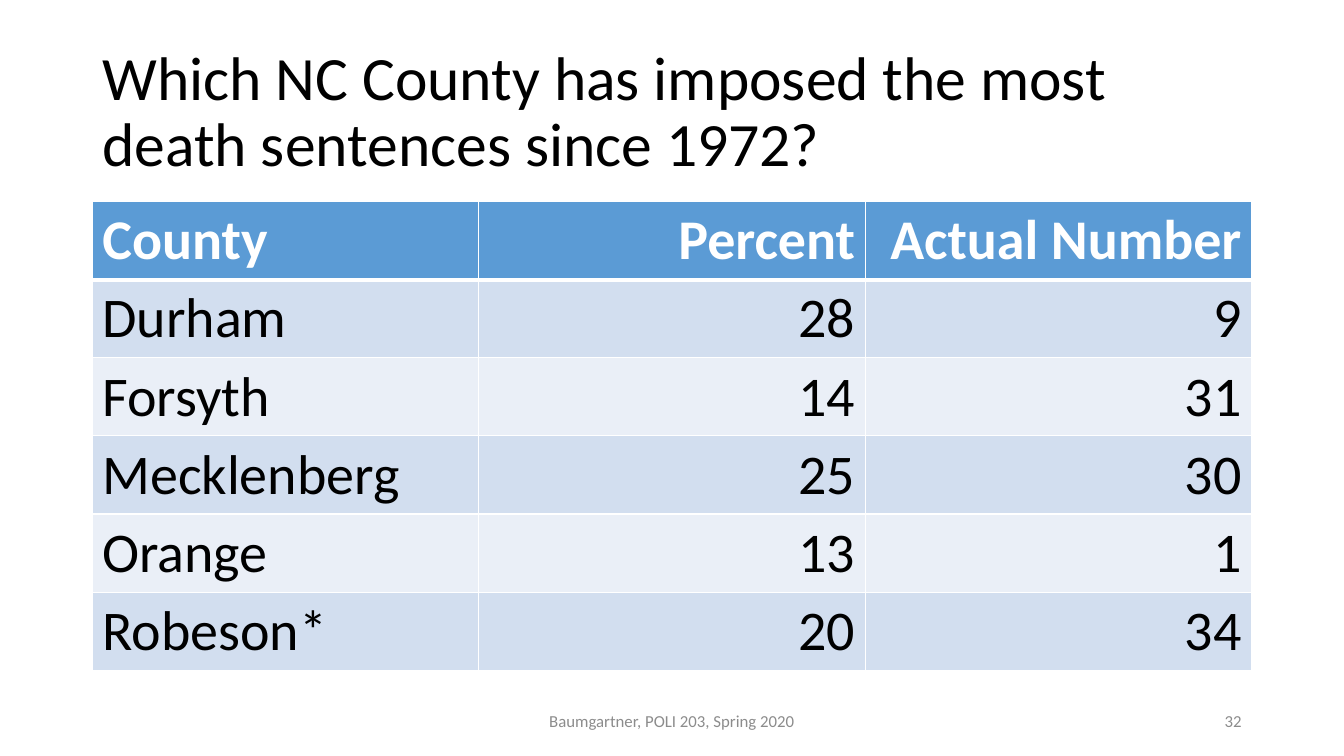
from dataclasses import dataclass

from lxml.etree import SubElement
from pptx import Presentation
from pptx.dml.color import RGBColor
from pptx.enum.text import MSO_ANCHOR, PP_ALIGN
from pptx.oxml.ns import qn
from pptx.util import Pt


@dataclass(frozen=True)
class Theme:
    font: str = "Calibri"
    ink: str = "000000"
    paper: str = "FFFFFF"
    muted: str = "8C8C8C"
    header: str = "5B9BD5"
    bands: tuple = ("D2DEEF", "EAEFF7")
    title_size: int = 44
    table_size: int = 40
    footer_size: int = 12
    rule: int = 1
    header_rule: int = 3


class SlideBuilder:
    def __init__(self, slide, theme):
        self.slide = slide
        self.theme = theme

    def fill_line(self, paragraph, text, size, color, align, bold=False, spacing=1.0):
        paragraph.alignment = align
        paragraph.line_spacing = spacing
        run = paragraph.add_run()
        run.text = text
        formats = {"name": self.theme.font, "size": Pt(size), "bold": bold}
        for attribute, value in formats.items():
            setattr(run.font, attribute, value)
        run.font.color.rgb = RGBColor.from_string(color)

    def text(self, box, text, size, color, align=PP_ALIGN.LEFT, spacing=1.0):
        frame = self.slide.shapes.add_textbox(*map(Pt, box)).text_frame
        formats = {"word_wrap": True, "vertical_anchor": MSO_ANCHOR.MIDDLE}
        for attribute, value in formats.items():
            setattr(frame, attribute, value)
        self.fill_line(frame.paragraphs[0], text, size, color, align, spacing=spacing)

    def border(self, cell, side, width):
        line = SubElement(cell._tc.get_or_add_tcPr(), qn(f"a:ln{side}"), w=str(Pt(width)))
        fill = SubElement(line, qn("a:solidFill"))
        SubElement(fill, qn("a:srgbClr"), val=self.theme.paper)

    def table(self, box, rows):
        theme = self.theme
        grid = self.slide.shapes.add_table(len(rows), len(rows[0]), *map(Pt, box)).table
        for r, values in enumerate(rows):
            is_header = r == 0
            fill = theme.header if is_header else theme.bands[(r - 1) % 2]
            color = theme.paper if is_header else theme.ink
            # The thick rule runs between the header and the first county
            widths = {"L": theme.rule, "R": theme.rule,
                      "T": theme.header_rule if r == 1 else theme.rule,
                      "B": theme.header_rule if is_header else theme.rule}
            for c, value in enumerate(values):
                cell = grid.cell(r, c)
                for side, width in widths.items():
                    self.border(cell, side, width)
                cell.fill.solid()
                cell.fill.fore_color.rgb = RGBColor.from_string(fill)
                align = PP_ALIGN.RIGHT if c else PP_ALIGN.LEFT
                self.fill_line(cell.text_frame.paragraphs[0], value, theme.table_size,
                               color, align, bold=is_header)


COUNTIES = [
    ("County", "Percent", "Actual Number"),
    ("Durham", "28", "9"),
    ("Forsyth", "14", "31"),
    ("Mecklenberg", "25", "30"),
    ("Orange", "13", "1"),
    ("Robeson*", "20", "34"),
]


def main():
    deck = Presentation()
    deck.slide_width, deck.slide_height = Pt(960), Pt(540)
    theme = Theme()
    page = SlideBuilder(deck.slides.add_slide(deck.slide_layouts[6]), theme)

    # Title
    page.text((66, 28.75, 828, 104.4),
              "Which NC County has imposed the most death sentences since 1972?",
              theme.title_size, theme.ink, spacing=0.9)

    # County table
    page.table((66, 144, 828, 334.8), COUNTIES)

    # Footer and slide number
    page.text((318, 500.5, 324, 28.75), "Baumgartner, POLI 203, Spring 2020",
              theme.footer_size, theme.muted, PP_ALIGN.CENTER)
    page.text((678, 500.5, 216, 28.75), "32",
              theme.footer_size, theme.muted, PP_ALIGN.RIGHT)

    deck.save("out.pptx")


if __name__ == "__main__":
    main()
